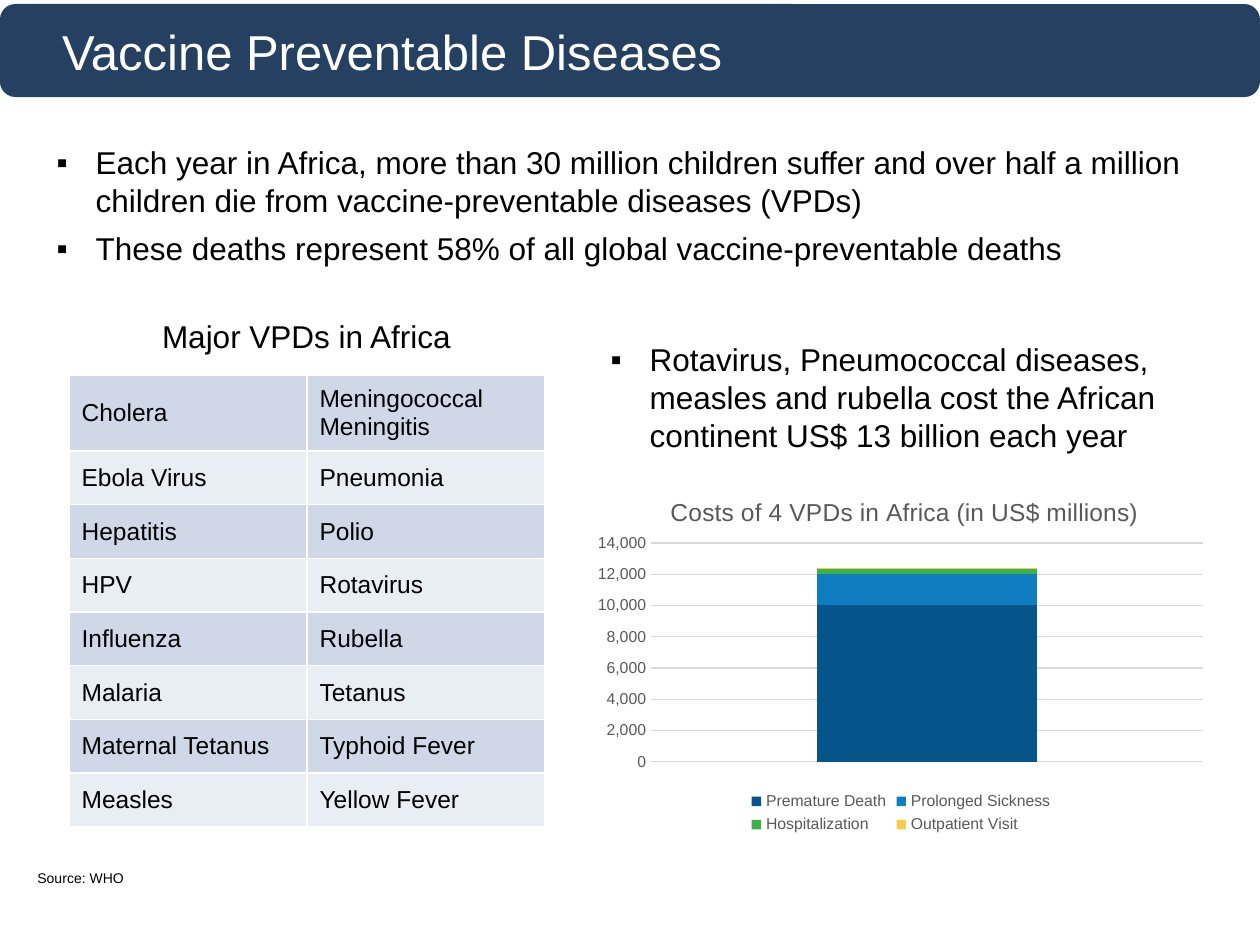
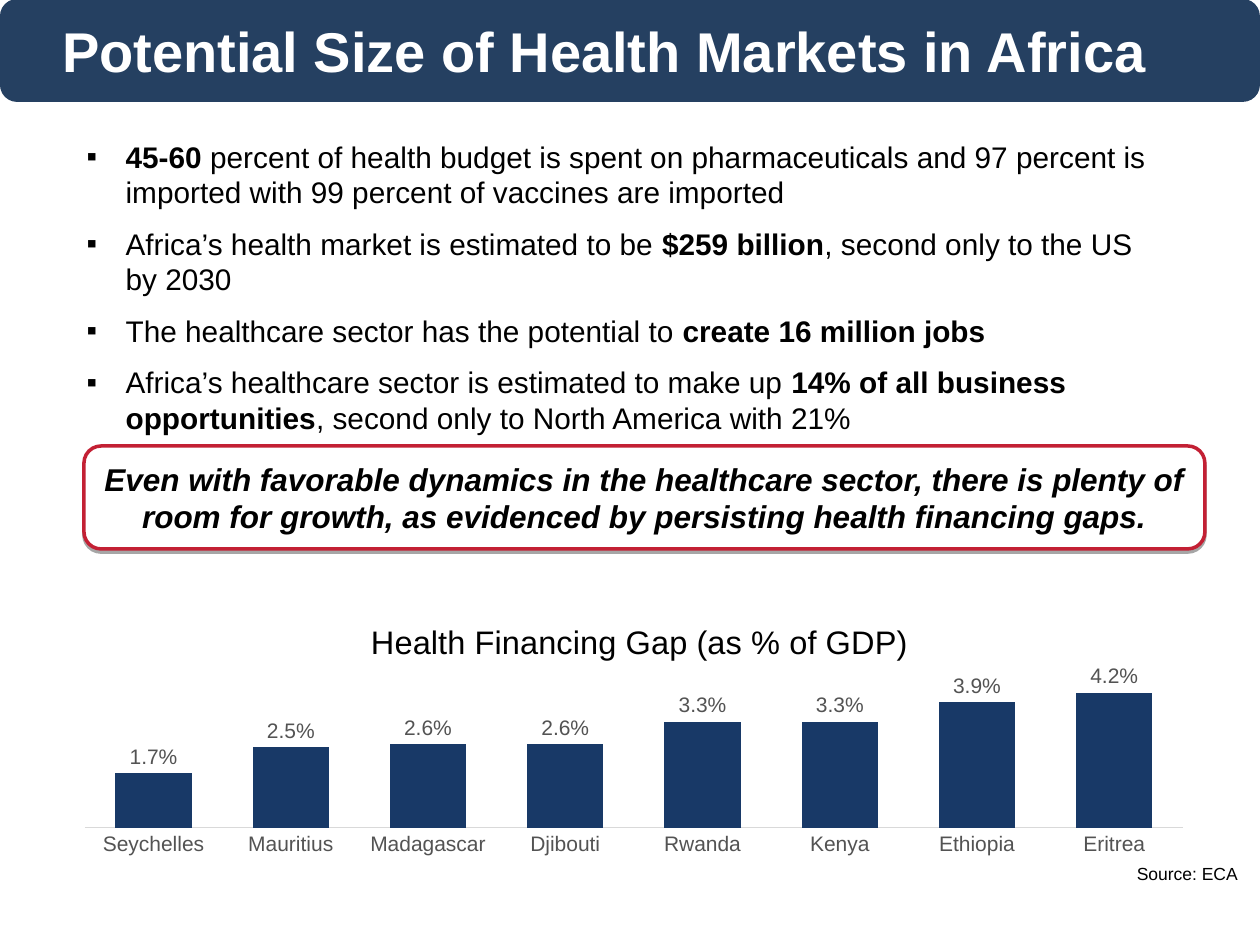
from lxml import etree
from pptx import Presentation
from pptx import util as u
from pptx.chart.data import CategoryChartData
from pptx.dml.color import RGBColor
from pptx.enum import chart as charts, shapes, text
from pptx.oxml import parse_xml
from pptx.oxml.ns import nsdecls, qn

FONT = "Arial"
BAND, BLACK, WHITE, RED = "254061", "000000", "FFFFFF", "C32034"
GREY, RULE, NAVY = "595959", "D9D9D9", "183967"
LABEL = "535353"
ROW_FILLS = ("D0D8E8", "E9EDF4")
PAGE_WIDTH, PAGE_HEIGHT = 1260, 945
INDENT = 39

DISEASES = [
    ("Cholera", "Meningococcal Meningitis"),
    ("Ebola Virus", "Pneumonia"),
    ("Hepatitis", "Polio"),
    ("HPV", "Rotavirus"),
    ("Influenza", "Rubella"),
    ("Malaria", "Tetanus"),
    ("Maternal Tetanus", "Typhoid Fever"),
    ("Measles", "Yellow Fever"),
]
COSTS = [
    ("Premature Death", 10000, "05558B"),
    ("Prolonged Sickness", 2000, "0F7DBF"),
    ("Hospitalization", 300, "3CB04A"),
    ("Outpatient Visit", 100, "F8CD4B"),
]
FINANCING_GAPS = {
    "Seychelles": 0.017, "Mauritius": 0.025, "Madagascar": 0.026, "Djibouti": 0.026,
    "Rwanda": 0.033, "Kenya": 0.033, "Ethiopia": 0.039, "Eritrea": 0.042,
}


def px(length):
    """Turn pixels, 126 to the inch, into EMU."""
    return u.Emu(round(length * 914400 / 126))


def emu_box(box):
    return [px(length) for length in box]


def color(value):
    return RGBColor.from_string(value)


def style(font, size, fill=BLACK, bold=False, italic=False):
    font.name, font.size = FONT, u.Pt(size)
    font.bold, font.italic = bold, italic
    font.color.rgb = color(fill)


def move(shape, box):
    shape.left, shape.top, shape.width, shape.height = emu_box(box)


def add_round_box(page, box, fill):
    shape = page.shapes.add_shape(shapes.MSO_SHAPE.ROUNDED_RECTANGLE, *emu_box(box))
    shape.shadow.inherit = False
    shape.fill.solid()
    shape.fill.fore_color.rgb = color(fill)
    shape.line.fill.background()
    return shape


def add_page(deck, layout_name, title, size, band_top, band_height, bold=False):
    """Add a page whose title sits on the dark band."""
    page = deck.slides.add_slide(deck.slide_layouts.get_by_name(layout_name))
    box = (0, band_top, PAGE_WIDTH, band_height)
    band = add_round_box(page, box, BAND)
    page.shapes.title.element.addprevious(band.element)
    move(page.shapes.title, box)
    frame = page.shapes.title.text_frame
    frame.text = title
    frame.auto_size = text.MSO_AUTO_SIZE.NONE
    frame.vertical_anchor = text.MSO_ANCHOR.MIDDLE
    frame.margin_left = px(62)
    para = frame.paragraphs[0]
    para.alignment = text.PP_ALIGN.LEFT
    style(para.runs[0].font, size, WHITE, bold)
    return page


def add_bullet(para):
    properties = para._p.get_or_add_pPr()
    properties.set("marL", str(px(INDENT)))
    properties.set("indent", str(-px(INDENT)))
    etree.SubElement(properties, qn("a:buFont")).set("typeface", FONT)
    etree.SubElement(properties, qn("a:buChar")).set("char", "▪")


def fill_list(body, box, items, size, before=0, after=0):
    """Fill a body placeholder; text between ** marks is bold."""
    move(body, box)
    frame = body.text_frame
    frame.auto_size = text.MSO_AUTO_SIZE.NONE
    for index, item in enumerate(items):
        para = frame.add_paragraph() if index else frame.paragraphs[0]
        add_bullet(para)
        para.space_before = u.Pt(before if index else 0)
        para.space_after = u.Pt(after)
        for part, words in enumerate(item.split("**")):
            if words:
                span = para.add_run()
                span.text = words
                style(span.font, size, bold=part % 2 == 1)


def add_label(page, box, words, size, align=text.PP_ALIGN.LEFT, wrap=True):
    frame = page.shapes.add_textbox(*emu_box(box)).text_frame
    frame.word_wrap = wrap
    frame.text = words
    para = frame.paragraphs[0]
    para.alignment = align
    style(para.runs[0].font, size)


def add_callout(page, box, words):
    shape = add_round_box(page, box, WHITE)
    shape.line.color.rgb = color(RED)
    shape.line.width = u.Pt(2)
    effects = shape.element.spPr.find(qn("a:effectLst"))
    effects.append(parse_xml(
        f'<a:outerShdw {nsdecls("a")} blurRad="0" dist="{u.Pt(1.8)}" dir="5400000" rotWithShape="0">'
        f'<a:srgbClr val="{BLACK}"><a:alpha val="35000"/></a:srgbClr></a:outerShdw>'))
    frame = shape.text_frame
    frame.word_wrap = True
    frame.text = words
    frame.vertical_anchor = text.MSO_ANCHOR.MIDDLE
    para = frame.paragraphs[0]
    para.alignment = text.PP_ALIGN.CENTER
    style(para.runs[0].font, 18, bold=True, italic=True)


def add_borders(cell):
    properties = cell._tc.get_or_add_tcPr()
    for side in ("lnL", "lnR", "lnT", "lnB"):
        properties.append(parse_xml(
            f'<a:{side} {nsdecls("a")} w="{u.Pt(1)}"><a:solidFill>'
            f'<a:srgbClr val="{WHITE}"/></a:solidFill></a:{side}>'))


def add_disease_table(page, box, first_height):
    frame = page.shapes.add_table(len(DISEASES), len(DISEASES[0]), *emu_box(box))
    table = frame.table
    table.first_row = table.horz_banding = False
    other_height = (box[3] - first_height) / (len(DISEASES) - 1)
    for row_index, names in enumerate(DISEASES):
        table.rows[row_index].height = px(other_height if row_index else first_height)
        for column_index, name in enumerate(names):
            cell = table.cell(row_index, column_index)
            add_borders(cell)
            cell.fill.solid()
            cell.fill.fore_color.rgb = color(ROW_FILLS[row_index % 2])
            cell.vertical_anchor = text.MSO_ANCHOR.MIDDLE
            cell.text = name
            style(cell.text_frame.paragraphs[0].runs[0].font, 14)


def layout_xml(box, offsets, inner=False):
    """Give a chart layout for offsets in px: left, top and, for a plot, width, height."""
    target = '<c:layoutTarget val="inner"/>' if inner else ""
    modes = '<c:xMode val="edge"/><c:yMode val="edge"/>'
    values = "".join(
        f'<c:{name} val="{offset / whole:.4f}"/>'
        for name, offset, whole in zip("xywh", offsets, box[2:] * 2))
    return parse_xml(f'<c:layout {nsdecls("c")}><c:manualLayout>{target}{modes}{values}'
                     "</c:manualLayout></c:layout>")


def add_column_chart(page, box, kind, data, title, title_size, title_fill, title_at, plot_at):
    """Add a column chart with its title and plot area placed inside the box."""
    chart = page.shapes.add_chart(kind, *emu_box(box), data).chart
    style(chart.font, 10, LABEL)
    chart.has_title = True
    frame = chart.chart_title.text_frame
    frame.text = title
    style(frame.paragraphs[0].runs[0].font, title_size, title_fill)
    chart.chart_title.include_in_layout = False
    title_element = chart.chart_title._element
    plot_element = chart._chartSpace.chart.plotArea
    for element in (title_element, plot_element):
        for old in element.findall(qn("c:layout")):
            element.remove(old)
    title_element.find(qn("c:tx")).addnext(layout_xml(box, title_at))
    plot_element.insert(0, layout_xml(box, plot_at, inner=True))
    chart.plots[0].vary_by_categories = False
    return chart


def set_value_axis(axis, top, step, number_format):
    axis.minimum_scale, axis.maximum_scale, axis.major_unit = 0, top, step
    axis.tick_labels.number_format = number_format
    axis.tick_labels.number_format_is_linked = False
    axis.major_tick_mark = charts.XL_TICK_MARK.NONE


def paint_series(series, fill):
    series.format.fill.solid()
    series.format.fill.fore_color.rgb = color(fill)


def draw_rule(line):
    line.color.rgb = color(RULE)
    line.width = u.Pt(0.75)


def add_cost_chart(page, box):
    data = CategoryChartData()
    data.categories = ["1"]
    for name, cost, _ in COSTS:
        data.add_series(name, [cost])
    chart = add_column_chart(
        page, box, charts.XL_CHART_TYPE.COLUMN_STACKED, data,
        "Costs of 4 VPDs in Africa (in US$ millions)", 14, GREY, (80, 20), (65, 71, 552, 219))
    plot = chart.plots[0]
    plot.gap_width, plot.overlap = 150, 100
    for series, (_, _, fill) in zip(plot.series, COSTS):
        paint_series(series, fill)
    chart.category_axis.visible = False
    axis = chart.value_axis
    set_value_axis(axis, 14000, 2000, "#,##0")
    style(axis.tick_labels.font, 9, GREY)
    axis.format.line.fill.background()
    draw_rule(axis.major_gridlines.format.line)
    chart.has_legend = True
    chart.legend.position = charts.XL_LEGEND_POSITION.BOTTOM
    chart.legend.include_in_layout = False
    style(chart.legend.font, 9, GREY)


def add_gap_chart(page, box):
    data = CategoryChartData(number_format="0.0%")
    data.categories = list(FINANCING_GAPS)
    data.add_series("Series 1", list(FINANCING_GAPS.values()))
    chart = add_column_chart(
        page, box, charts.XL_CHART_TYPE.COLUMN_CLUSTERED, data,
        "Health Financing Gap (as % of GDP)", 18.6, BLACK, (303, 21), (23, 74, 1098, 161))
    chart.has_legend = False
    plot = chart.plots[0]
    plot.gap_width, plot.overlap = 80, -27
    paint_series(plot.series[0], NAVY)
    plot.has_data_labels = True
    labels = plot.data_labels
    labels.show_value = True
    labels.position = charts.XL_LABEL_POSITION.OUTSIDE_END
    labels.number_format, labels.number_format_is_linked = "0.0%", False
    style(labels.font, 12, LABEL)
    set_value_axis(chart.value_axis, 0.05, 0.01, "0.0%")
    chart.value_axis.has_major_gridlines = False
    chart.value_axis.visible = False
    axis = chart.category_axis
    axis.major_tick_mark = charts.XL_TICK_MARK.NONE
    style(axis.tick_labels.font, 12, LABEL)
    draw_rule(axis.format.line)


def build_diseases_page(deck):
    page = add_page(deck, "Two Content", "Vaccine Preventable Diseases", 28, 4, 93)
    fill_list(page.placeholders[1], (44, 137, 1171, 137), [
        "Each year in Africa, more than 30 million children suffer and over half a million "
        "children die from vaccine-preventable diseases (VPDs)",
        "These deaths represent 58% of all global vaccine-preventable deaths",
    ], 18, after=6)
    fill_list(page.placeholders[2], (598, 334, 599, 127), [
        "Rotavirus, Pneumococcal diseases, measles and rubella cost the African continent "
        "US$ 13 billion each year",
    ], 18, after=6)
    add_label(page, (44, 311, 525, 50), "Major VPDs in Africa", 18, text.PP_ALIGN.CENTER)
    add_disease_table(page, (69, 375, 476, 452), 76)
    add_cost_chart(page, (586, 472, 630, 367))
    add_label(page, (25, 863, 113, 30), "Source: WHO", 8, wrap=False)


def build_markets_page(deck):
    page = add_page(deck, "Title and Content", "Potential Size of Health Markets in Africa",
                    32, -1, 103, bold=True)
    fill_list(page.placeholders[1], (74, 132, 1111, 312), [
        "**45-60** percent of health budget is spent on pharmaceuticals and 97 percent is "
        "imported with 99 percent of vaccines are imported",
        "Africa’s health market is estimated to be **$259 billion**, second only to the US by 2030",
        "The healthcare sector has the potential to **create 16 million jobs**",
        "Africa’s healthcare sector is estimated to make up **14% of all business "
        "opportunities**, second only to North America with 21%",
    ], 17, before=9)
    add_gap_chart(page, (62, 593, 1144, 267))
    add_callout(page, (84, 446, 1121, 103),
                "Even with favorable dynamics in the healthcare sector, there is plenty of room "
                "for growth, as evidenced by persisting health financing gaps.")
    add_label(page, (333, 857, 917, 34), "Source: ECA", 10, text.PP_ALIGN.RIGHT)


def main():
    deck = Presentation()
    deck.slide_width, deck.slide_height = px(PAGE_WIDTH), px(PAGE_HEIGHT)
    build_diseases_page(deck)
    build_markets_page(deck)
    deck.save("out.pptx")


if __name__ == "__main__":
    main()
